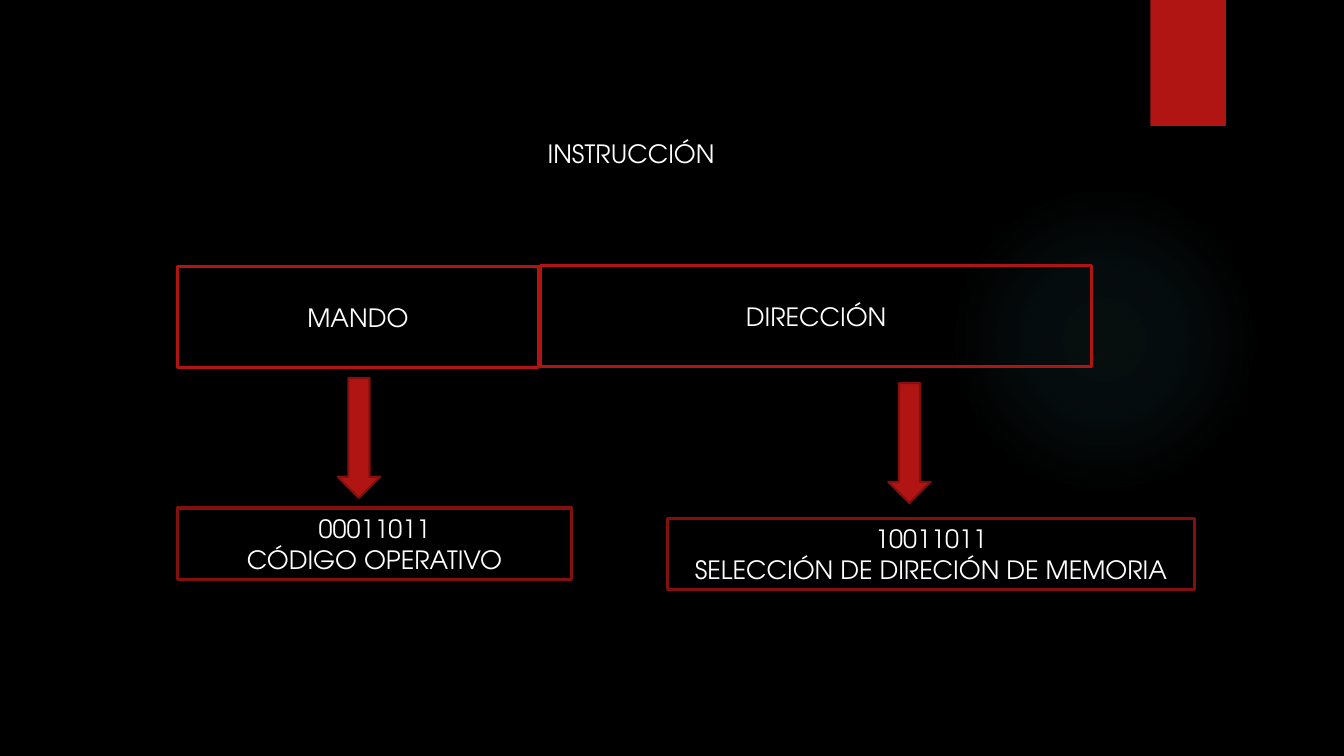
from lxml import etree
from pptx import Presentation
from pptx import util as u
from pptx.dml.color import RGBColor
from pptx.enum import shapes, text
from pptx.oxml.ns import qn

RED, DARK_RED, WHITE, BLACK, TEAL = "B01513", "82100E", "FFFFFF", "000000", "50B9C1"


def rgb(value):
    return RGBColor.from_string(value)


class Deck:
    font = {"name": "TeX Gyre Adventor", "size": u.Pt(18), "bold": False}
    frame = {"word_wrap": True, "auto_size": text.MSO_AUTO_SIZE.NONE,
             "vertical_anchor": text.MSO_ANCHOR.MIDDLE}

    def __init__(self, prs):
        self.s = prs.slides.add_slide(prs.slide_layouts[5])
        fill = self.s.background.fill
        fill.solid()
        fill.fore_color.rgb = rgb(BLACK)

    def label(self, sp, lines):
        tf = sp.text_frame
        for key, value in self.frame.items():
            setattr(tf, key, value)
        tf.text = "\n".join(lines)
        for p in tf.paragraphs:
            p.alignment = text.PP_ALIGN.CENTER
            for r in p.runs:
                for key, value in self.font.items():
                    setattr(r.font, key, value)
                r.font.color.rgb = rgb(WHITE)

    def title(self, at, line):
        sp = self.s.shapes.title
        sp.left, sp.top, sp.width, sp.height = map(u.Inches, at)
        self.label(sp, [line])

    def shape(self, kind, at, fill=None, line=None, width=1):
        sp = self.s.shapes.add_shape(kind, *map(u.Inches, at))
        sp.shadow.inherit = False
        if fill:
            sp.fill.solid()
            sp.fill.fore_color.rgb = rgb(fill)
        else:
            sp.fill.background()
        if line:
            sp.line.color.rgb = rgb(line)
            sp.line.width = u.Pt(width)
        else:
            sp.line.fill.background()
        return sp

    def box(self, at, lines, line, width):
        sp = self.shape(shapes.MSO_SHAPE.RECTANGLE, at, None, line, width)
        self.label(sp, lines)

    def arrow(self, left, top):
        self.shape(shapes.MSO_SHAPE.DOWN_ARROW, (left, top, 0.42, 1.19), RED, DARK_RED, 1.5)

    def glow(self, at, color, stops):
        """Draw a circle whose colour fades outwards; stops are (position %, opacity %)."""
        sp = self.shape(shapes.MSO_SHAPE.OVAL, at)
        old = sp._element.spPr.find(qn("a:noFill"))
        grad = etree.Element(qn("a:gradFill"), rotWithShape="1")
        gs_list = etree.SubElement(grad, qn("a:gsLst"))
        for pos, opacity in stops:
            gs = etree.SubElement(gs_list, qn("a:gs"), pos=str(pos * 1000))
            clr = etree.SubElement(gs, qn("a:srgbClr"), val=color)
            etree.SubElement(clr, qn("a:alpha"), val=str(opacity * 1000))
        center = etree.SubElement(grad, qn("a:path"), path="circle")
        etree.SubElement(center, qn("a:fillToRect"), dict.fromkeys("ltrb", "50000"))
        old.getparent().replace(old, grad)


def main():
    prs = Presentation()
    prs.slide_width, prs.slide_height = u.Inches(13.33), u.Inches(7.5)
    deck = Deck(prs)

    deck.glow((9.41, 1.83, 3.08, 3.08), TEAL, [(0, 7), (36, 6), (69, 0)])
    deck.shape(shapes.MSO_SHAPE.RECTANGLE, (11.41, 0, 0.75, 1.25), RED)
    deck.title((3.35, 1.32, 5.82, 0.4), "INSTRUCCIÓN")

    deck.box((1.76, 2.64, 3.58, 1.01), ["MANDO"], RED, 2)
    deck.box((5.36, 2.63, 5.47, 1.01), ["DIRECCIÓN"], RED, 2)
    deck.arrow(3.35, 3.75)
    deck.arrow(8.81, 3.8)
    deck.box((1.76, 5.04, 3.91, 0.71), ["00011011", "CÓDIGO OPERATIVO"], DARK_RED, 2.25)
    deck.box((6.62, 5.14, 5.23, 0.71), ["10011011", "SELECCIÓN DE DIRECIÓN DE MEMORIA"],
             DARK_RED, 2.25)

    prs.save("out.pptx")


if __name__ == "__main__":
    main()
